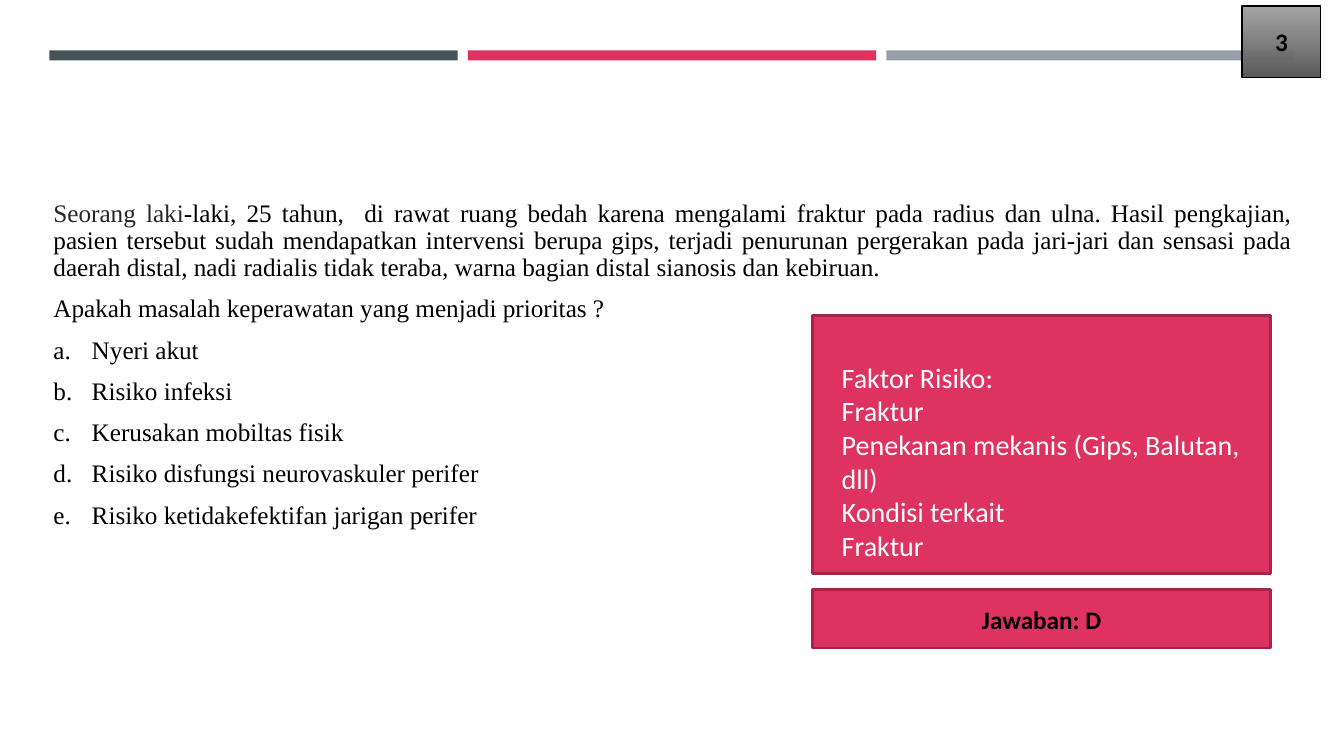
import pptx
import pptx.util
import pptx.dml.color
import pptx.enum.shapes
import pptx.enum.text
import pptx.oxml
import pptx.oxml.ns
from lxml import etree

Inches = pptx.util.Inches
Pt = pptx.util.Pt
ALIGN = pptx.enum.text.PP_ALIGN
MIDDLE = pptx.enum.text.MSO_ANCHOR.MIDDLE

COLORS = {
    "slate": "465359", "pink": "DE3261", "gray": "969FA7", "wine": "A42548",
    "black": "000000", "charcoal": "262626", "white": "FFFFFF",
    "badge_top": "9B9B9B", "badge_bottom": "595959",
}

CASE_OPENING = "Seorang laki"
CASE_REST = (
    "-laki, 25 tahun,  di rawat ruang bedah karena mengalami fraktur pada radius dan ulna. "
    "Hasil pengkajian, pasien tersebut sudah mendapatkan intervensi berupa gips, terjadi "
    "penurunan pergerakan pada jari-jari dan sensasi pada daerah distal, nadi radialis tidak "
    "teraba, warna bagian distal sianosis dan kebiruan."
)
QUESTION = "Apakah masalah keperawatan yang menjadi prioritas ?"
CHOICES = [
    "Nyeri akut", "Risiko infeksi", "Kerusakan mobiltas fisik",
    "Risiko disfungsi neurovaskuler perifer", "Risiko ketidakefektifan jarigan perifer",
]
RISK_FACTORS = [
    "Faktor Risiko:", "Fraktur", "Penekanan mekanis (Gips, Balutan, dll)",
    "Kondisi terkait", "Fraktur",
]


def rgb(name):
    return pptx.dml.color.RGBColor.from_string(COLORS[name])


def apply(target, values):
    for name, value in values.items():
        setattr(target, name, value)


def add_run(paragraph, text, color, **font_values):
    run = paragraph.add_run()
    run.text = text
    apply(run.font, font_values)
    run.font.color.rgb = rgb(color)


def add_box(slide, box, fill=None, line=None, weight=1.75):
    shape = slide.shapes.add_shape(
        pptx.enum.shapes.MSO_SHAPE.RECTANGLE, *[Inches(v) for v in box])
    shape.shadow.inherit = False
    if fill:
        shape.fill.solid()
        shape.fill.fore_color.rgb = rgb(fill)
    if line:
        shape.line.color.rgb = rgb(line)
        shape.line.width = Pt(weight)
    else:
        shape.line.fill.background()
    apply(shape.text_frame, {"word_wrap": True, "vertical_anchor": MIDDLE})
    return shape


# Three coloured bars along the top
def add_header_bars(slide, box):
    left, top, width, height = box
    gap = 0.1
    bar_width = (width - 2 * gap) / 3
    for i, color in enumerate(["slate", "pink", "gray"]):
        add_box(slide, (left + i * (bar_width + gap), top, bar_width, height), color)


# Case description, question and lettered choices
def add_question(slide, box):
    body = slide.placeholders[1]
    apply(body, dict(zip(["left", "top", "width", "height"], [Inches(v) for v in box])))
    frame = body.text_frame
    apply(frame, {"word_wrap": True, "vertical_anchor": MIDDLE,
                  "auto_size": pptx.enum.text.MSO_AUTO_SIZE.NONE})
    font = {"size": Pt(18), "name": "Times New Roman"}
    spacing = {"alignment": ALIGN.JUSTIFY, "line_spacing": 0.9,
               "space_before": Pt(10), "space_after": Pt(0)}
    paragraphs = [[(CASE_OPENING, "charcoal"), (CASE_REST, "black")], [(QUESTION, "black")]]
    paragraphs += [[(choice, "black")] for choice in CHOICES]
    for i, runs in enumerate(paragraphs):
        paragraph = frame.add_paragraph() if i else frame.paragraphs[0]
        apply(paragraph, spacing)
        for text, color in runs:
            add_run(paragraph, text, color, **font)
        lettered = i >= 2
        indent = Inches(0.38) if lettered else 0
        properties = paragraph._p.get_or_add_pPr()
        properties.set("marL", str(indent))
        properties.set("indent", str(-indent))
        if lettered:
            bullet = etree.SubElement(properties, pptx.oxml.ns.qn("a:buAutoNum"))
            bullet.set("type", "alphaLcPeriod")
        else:
            etree.SubElement(properties, pptx.oxml.ns.qn("a:buNone"))


# Question number in the corner
def add_number_badge(slide, box, number):
    badge = add_box(slide, box, line="black", weight=1)
    badge.fill.gradient()
    badge.fill.gradient_angle = 270
    for stop, position, color in zip(
            badge.fill.gradient_stops, [0, 1], ["badge_top", "badge_bottom"]):
        stop.position = position
        stop.color.rgb = rgb(color)
    top_color = next(badge.element.iter(pptx.oxml.ns.qn("a:gs")))[0]
    etree.SubElement(top_color, pptx.oxml.ns.qn("a:alpha")).set("val", "90000")
    add_label(badge, number)


def add_label(shape, text):
    paragraph = shape.text_frame.paragraphs[0]
    paragraph.alignment = ALIGN.CENTER
    add_run(paragraph, text, "black", size=Pt(18), name="Calibri", bold=True)


# Risk factors with the answer below
def add_answer_panel(slide, box):
    left, top, width, height = box
    answer_height, gap = 0.58, 0.16
    factors = add_box(
        slide, (left, top, width, height - answer_height - gap), "pink", "wine")
    frame = factors.text_frame
    frame.margin_top = Inches(0.38)
    for i, factor in enumerate(RISK_FACTORS):
        paragraph = frame.add_paragraph() if i else frame.paragraphs[0]
        paragraph.alignment = ALIGN.LEFT
        paragraph._p.get_or_add_pPr().set("marL", str(Inches(0.19)))
        add_run(paragraph, factor, "white", size=Pt(20), name="Calibri")
    answer = add_box(
        slide, (left, top + height - answer_height, width, answer_height), "pink", "wine")
    add_label(answer, "Jawaban: D")


def main():
    deck = pptx.Presentation()
    apply(deck, {"slide_width": Inches(13.33), "slide_height": Inches(7.5)})
    slide = deck.slides.add_slide(deck.slide_layouts[1])
    title = slide.shapes.title.element
    title.getparent().remove(title)
    add_header_bars(slide, (0.49, 0.5, 12.35, 0.1))
    add_question(slide, (0.43, 0.57, 12.49, 6.1))
    add_number_badge(slide, (12.32, 0.06, 0.78, 0.71), "3")
    add_answer_panel(slide, (8.06, 3.13, 4.54, 3.3))
    deck.save("out.pptx")


if __name__ == "__main__":
    main()
